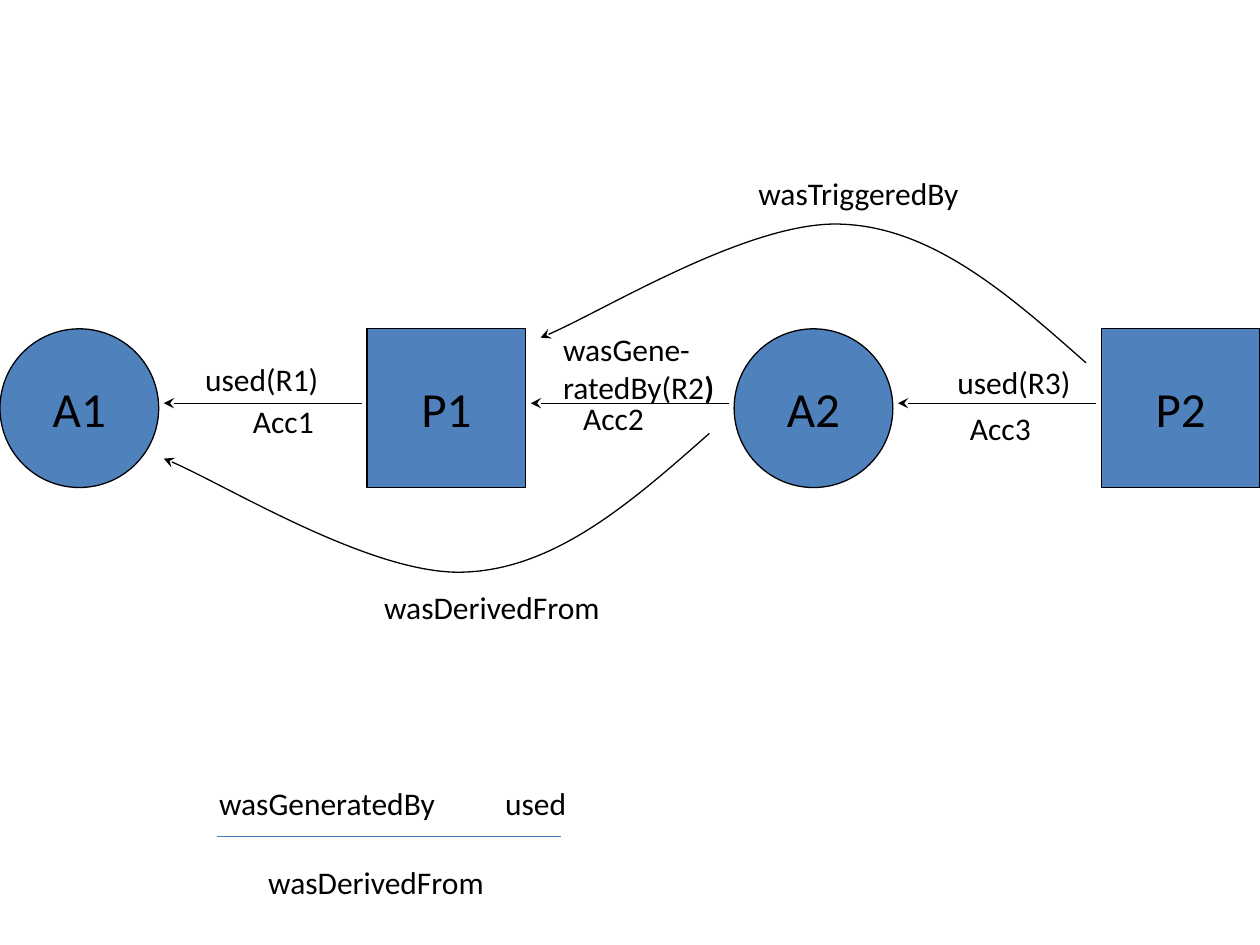
from pptx import Presentation
from pptx.dml.color import RGBColor
from pptx.enum.shapes import MSO_CONNECTOR, MSO_SHAPE
from pptx.enum.text import MSO_ANCHOR, MSO_AUTO_SIZE, PP_ALIGN
from pptx.oxml.ns import qn
from pptx.util import Inches, Pt
from lxml.etree import SubElement

HUES = {"node": "4F81BD", "ink": "000000", "rule": "4B7EBC"}
FONT = "Calibri"
WIDE, HIGH = 10, 7.5
SIZE, TOP, GAP = 1.26, 2.61, 0.04
AXIS = 3.2
NODES = [
    ("A1", MSO_SHAPE.OVAL),
    ("P1", MSO_SHAPE.RECTANGLE),
    ("A2", MSO_SHAPE.OVAL),
    ("P2", MSO_SHAPE.RECTANGLE),
]
LABELS = [
    ("used(R1)", 1.53, 2.81, 1.23),
    ("used(R3)", 7.5, 2.83, 1.23),
    ("Acc1", 1.91, 3.14, 0.76),
    ("Acc2", 4.53, 3.12, 0.76),
    ("Acc3", 7.6, 3.2, 0.76),
    ("wasTriggeredBy", 5.92, 1.33, 2.01),
    ("wasDerivedFrom", 2.95, 4.62, 2.09),
    ("wasGeneratedBy", 1.64, 6.17, 1.93),
    ("used", 3.91, 6.17, 0.69),
    ("wasDerivedFrom", 2.03, 6.8, 2.09),
]
SPLIT = ("wasGene-\nratedBy(R2", 4.37, 2.57, 1.58)
ARC = [(8.62, 2.88), (8.02, 2.35), (7.41, 1.81), (6.69, 1.78),
       (5.97, 1.74), (4.69, 2.53), (4.29, 2.68)]
SHIFT, FLIP = 2.99, 6.32
RULE = (1.72, 4.45, 6.64)


def color(name):
    return RGBColor.from_string(HUES[name])


def style(run, size):
    run.font.name = FONT
    run.font.size = Pt(size)
    run.font.color.rgb = color("ink")


def stroke(shape, hue="ink", head=False):
    shape.line.color.rgb = color(hue)
    shape.line.width = Pt(0.75)
    if head:
        line = shape._element.spPr.find(qn("a:ln"))
        SubElement(line, qn("a:tailEnd"), type="stealth")


def add_node(slide, name, kind, left):
    node = slide.shapes.add_shape(
        kind, Inches(left), Inches(TOP), Inches(SIZE), Inches(SIZE))
    node.shadow.inherit = False
    node.fill.solid()
    node.fill.fore_color.rgb = color("node")
    stroke(node)
    frame = node.text_frame
    frame.word_wrap = False
    frame.vertical_anchor = MSO_ANCHOR.MIDDLE
    frame.text = name
    frame.paragraphs[0].alignment = PP_ALIGN.CENTER
    style(frame.paragraphs[0].runs[0], 28)


def add_line(slide, start, end, y, hue="ink", head=False):
    line = slide.shapes.add_connector(
        MSO_CONNECTOR.STRAIGHT, Inches(start), Inches(y), Inches(end), Inches(y))
    stroke(line, hue, head)
    SubElement(line._element.spPr, qn("a:effectLst"))


def add_label(slide, text, left, top, width, wrap=False):
    high = 0.7 if wrap else 0.4
    box = slide.shapes.add_textbox(
        Inches(left), Inches(top), Inches(width), Inches(high))
    frame = box.text_frame
    frame.word_wrap = wrap
    frame.auto_size = MSO_AUTO_SIZE.SHAPE_TO_FIT_TEXT
    frame.text = text
    for para in frame.paragraphs:
        style(para.runs[0], 18)
    return frame


def add_curve(slide, points):
    """Draw a Bezier arrow from a start point and triples of control points."""
    spots = [(Inches(x), Inches(y)) for x, y in points]
    maker = slide.shapes.build_freeform(*spots[0])
    maker.add_line_segments(spots[1:], close=False)
    curve = maker.convert_to_shape()
    steps = list(curve._element.iter(qn("a:lnTo")))
    for i in range(0, len(steps), 3):
        bend = SubElement(steps[i].getparent(), qn("a:cubicBezTo"))
        for step in steps[i:i + 3]:
            bend.append(step[0])
            step.getparent().remove(step)
    curve.shadow.inherit = False
    curve.fill.background()
    stroke(curve, head=True)


def main():
    deck = Presentation()
    deck.slide_width, deck.slide_height = Inches(WIDE), Inches(HIGH)
    slide = deck.slides.add_slide(deck.slide_layouts[6])
    pitch = (WIDE - SIZE) / (len(NODES) - 1)
    for i, (name, kind) in enumerate(NODES):
        add_node(slide, name, kind, i * pitch)
        if i:
            add_line(slide, i * pitch - GAP, (i - 1) * pitch + SIZE + GAP,
                     AXIS, head=True)
    add_curve(slide, ARC)
    add_curve(slide, [(x - SHIFT, FLIP - y) for x, y in ARC])
    start, end, y = RULE
    add_line(slide, start, end, y, "rule")
    for label in LABELS:
        add_label(slide, *label)
    frame = add_label(slide, *SPLIT, wrap=True)
    run = frame.paragraphs[-1].add_run()
    run.text = ")"
    style(run, 18)
    run.font.bold = True
    deck.save("out.pptx")


if __name__ == "__main__":
    main()
